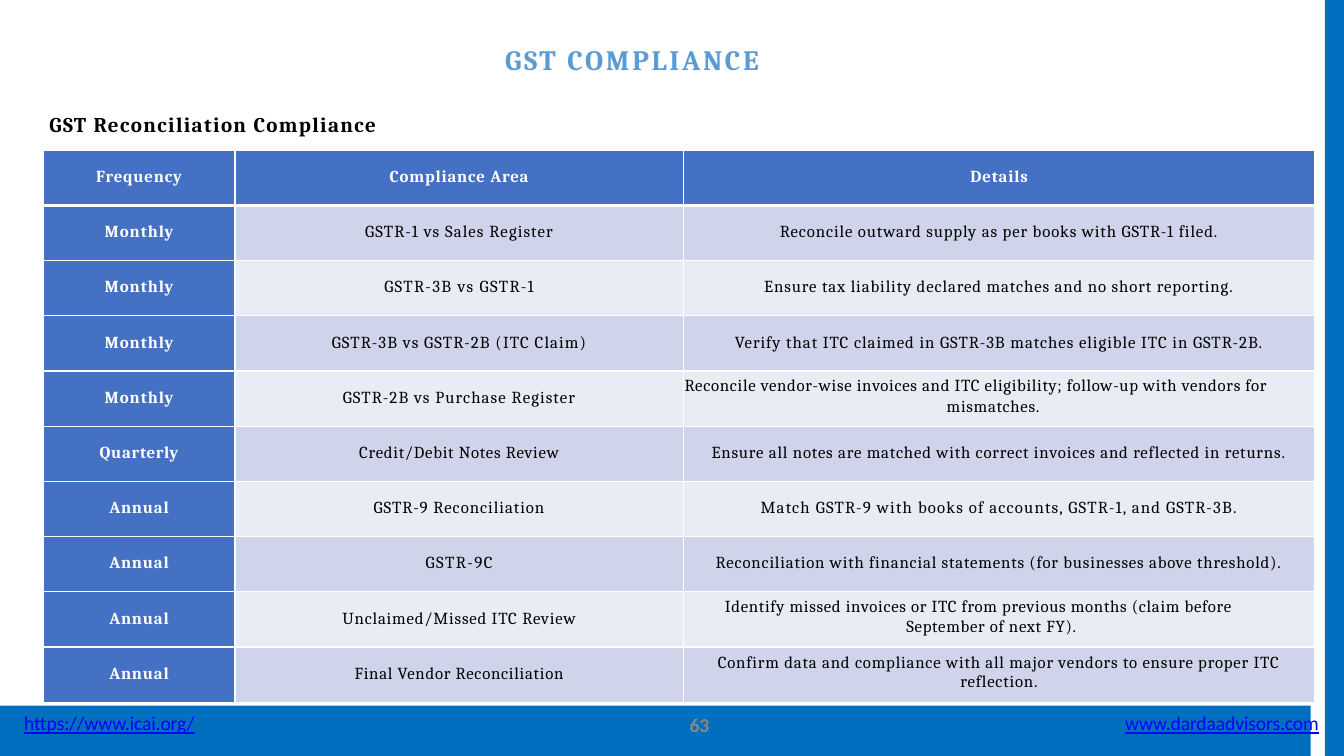
import pptx
import pptx.dml.color
import pptx.enum.shapes
import pptx.enum.text
import pptx.oxml
import pptx.oxml.ns
import pptx.util

Inches = pptx.util.Inches
Pt = pptx.util.Pt
LEFT = pptx.enum.text.PP_ALIGN.LEFT
CENTER = pptx.enum.text.PP_ALIGN.CENTER

FRAME_BLUE, HEAD_BLUE = "006FC0", "4471C4"
BANDS = ("CFD4EA", "E9EBF5")
WHITE, BLACK = "FFFFFF", "000000"

COLUMNS = (1.9, 4.45, 6.26)
HEADINGS = (("Frequency", 0.6), ("Compliance Area", 0.6), ("Details", 0.6))
# Each entry pairs its text with its letter spacing in points
CHECKS = (
    (("Monthly", 0.7), ("GSTR-1 vs Sales Register", 0.8),
     ("Reconcile outward supply as per books with GSTR-1 filed.", 0.65)),
    (("Monthly", 0.7), ("GSTR-3B vs GSTR-1", 1.0),
     ("Ensure tax liability declared matches and no short reporting.", 0.65)),
    (("Monthly", 0.7), ("GSTR-3B vs GSTR-2B (ITC Claim)", 0.8),
     ("Verify that ITC claimed in GSTR-3B matches eligible ITC in GSTR-2B.", 0.7)),
    (("Monthly", 0.7), ("GSTR-2B vs Purchase Register", 0.8),
     ("Reconcile vendor-wise invoices and ITC eligibility; "
      "follow-up with vendors for mismatches.", 0.5)),
    (("Quarterly", 0.5), ("Credit/Debit Notes Review", 0.55),
     ("Ensure all notes are matched with correct invoices and "
      "reflected in returns.", 0.6)),
    (("Annual", 0.6), ("GSTR-9 Reconciliation", 0.7),
     ("Match GSTR-9 with books of accounts, GSTR-1, and GSTR-3B.", 0.85)),
    (("Annual", 0.6), ("GSTR-9C", 1.1),
     ("Reconciliation with financial statements "
      "(for businesses above threshold).", 0.6)),
    (("Annual", 0.6), ("Unclaimed/Missed ITC Review", 0.6),
     ("Identify missed invoices or ITC from previous months "
      "(claim before September of next FY).", 0.5)),
    (("Annual", 0.6), ("Final Vendor Reconciliation", 0.55),
     ("Confirm data and compliance with all major vendors to ensure "
      "proper ITC\nreflection.", 0.6)),
)
# Two-line details by row: top margin, left indent, first-line indent
TWO_LINE = {4: (0.04, 2.61, -2.6), 8: (0.04, 2.21, -1.8), 9: (0.06, 0, 0)}


def rgb(value):
    return pptx.dml.color.RGBColor.from_string(value)


def paint(shape, color):
    shape.shadow.inherit = False
    shape.fill.solid()
    shape.fill.fore_color.rgb = rgb(color)
    shape.line.fill.background()


def write(frame, text, spacing, font, size, color, bold=False, align=LEFT, inset=0):
    frame.margin_left = frame.margin_right = frame.margin_bottom = 0
    frame.margin_top = Inches(inset)
    frame.text = text
    for paragraph in frame.paragraphs:
        paragraph.alignment = align
        paragraph.font.name = font
        paragraph.font.size = Pt(size)
        paragraph.font.bold = bold
        paragraph.font.color.rgb = rgb(color)
        for run in paragraph.runs:
            run._r.get_or_add_rPr().set("spc", str(round(spacing * 100)))


def add_label(slide, left, top, width, height, *text, **style):
    box = slide.shapes.add_textbox(
        Inches(left), Inches(top), Inches(width), Inches(height))
    box.text_frame.word_wrap = True
    write(box.text_frame, *text, **style)
    return box.text_frame.paragraphs[0]


def add_frame(slide, width, height):
    """Blue border: an open outline closed by a strip on the right."""
    side, top, bottom = 0.19, 0.16, 0.2
    strip = slide.shapes.add_shape(
        pptx.enum.shapes.MSO_SHAPE.RECTANGLE,
        Inches(width - side), 0, Inches(side), Inches(height))
    paint(strip, FRAME_BLUE)

    outline = [(0, height), (width - 0.09, height), (width - 0.09, height - bottom),
               (side, height - bottom), (side, top), (width - 0.02, top),
               (width - 0.02, 0)]
    builder = slide.shapes.build_freeform(0, 0, scale=Inches(1))
    builder.add_line_segments(outline, close=True)
    paint(builder.convert_to_shape(), FRAME_BLUE)


def add_borders(cell, row):
    properties = cell._tc.get_or_add_tcPr()
    widths = {"lnL": 1, "lnR": 1, "lnT": 3 if row == 1 else 1,
              "lnB": 3 if row == 0 else 1}
    for place, (side, width) in enumerate(widths.items()):
        properties.insert(place, pptx.oxml.parse_xml(
            f'<a:{side} {pptx.oxml.ns.nsdecls("a")} w="{Pt(width)}">'
            f'<a:solidFill><a:srgbClr val="{WHITE}"/></a:solidFill></a:{side}>'))


def add_checks_table(slide, left, top, width, height):
    rows = (HEADINGS,) + CHECKS
    table = slide.shapes.add_table(
        len(rows), len(COLUMNS), Inches(left), Inches(top),
        Inches(width), Inches(height)).table
    table.first_row = table.horz_banding = False
    for column, column_width in zip(table.columns, COLUMNS):
        column.width = Inches(column_width)

    for r, entries in enumerate(rows):
        for c, (text, spacing) in enumerate(entries):
            cell = table.cell(r, c)
            heading = r == 0 or c == 0
            margin, indent, first = 0.17, 0, 0
            if c == 2 and r in TWO_LINE:
                margin, indent, first = TWO_LINE[r]
            write(cell.text_frame, text, spacing, "Cambria", 12,
                  WHITE if heading else BLACK, bold=heading,
                  align=LEFT if indent else CENTER)
            cell.margin_left = cell.margin_right = cell.margin_bottom = 0
            cell.margin_top = Inches(margin)
            if indent:
                paragraph = cell.text_frame.paragraphs[0]
                paragraph.line_spacing = 1.07
                layout = paragraph._p.get_or_add_pPr()
                layout.set("marL", str(Inches(indent)))
                layout.set("indent", str(Inches(first)))
            cell.fill.solid()
            cell.fill.fore_color.rgb = rgb(HEAD_BLUE if heading else BANDS[(r - 1) % 2])
            add_borders(cell, r)


def add_headings(slide, left, top):
    add_label(slide, left + 4.53, top, 6.4, 0.76, "GST COMPLIANCE", 1.9,
              "Cambria", 20, "5B9BD4", bold=True, inset=0.17)
    add_label(slide, left + 0.01, top + 0.85, 3.8, 0.28,
              "GST Reconciliation Compliance", 1.0,
              "Cambria", 15, BLACK, bold=True, inset=0.01)


def add_footer(slide, left, top):
    for offset, width, address in ((0, 1.75, "https://www.icai.org/"),
                                   (10.92, 1.98, "www.dardaadvisors.com")):
        link = add_label(slide, left + offset, top, width, 0.22, address, -0.1,
                         "Calibri", 14, "0000FF")
        link.font.underline = True
        link.line_spacing = Pt(14.3)
    number = add_label(slide, left + 6.6, top + 0.02, 0.26, 0.24, "63", -0.2,
                       "Calibri", 14, "888888", bold=True)
    number.line_spacing = Pt(14.3)


def main():
    deck = pptx.Presentation()
    deck.slide_width, deck.slide_height = Inches(13.33), Inches(7.5)
    slide = deck.slides.add_slide(deck.slide_layouts[6])
    add_frame(slide, 13.33, 7.5)
    add_checks_table(slide, 0.43, 1.49, sum(COLUMNS), 5.48)
    add_footer(slide, 0.24, 7.09)
    add_headings(slide, 0.48, 0.25)
    deck.save("out.pptx")


if __name__ == "__main__":
    main()
